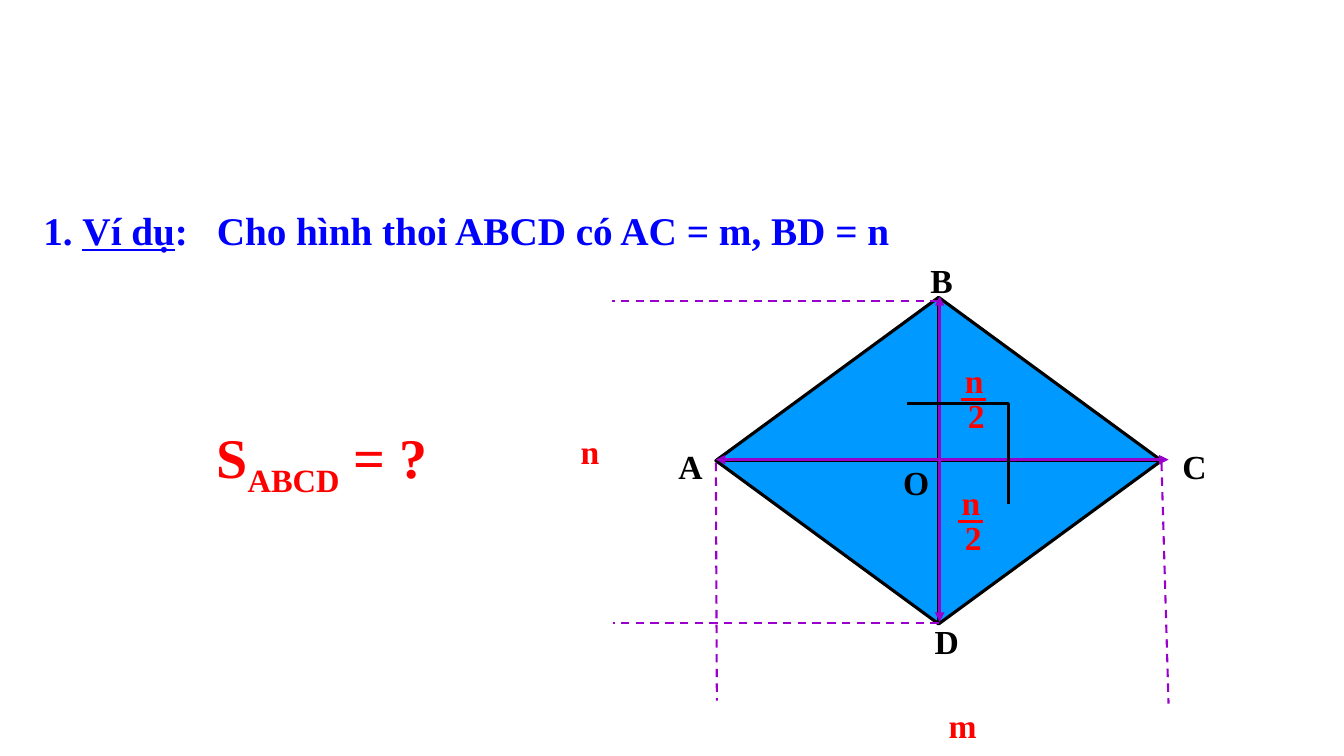
from lxml import etree
from pptx import Presentation
from pptx.dml.color import RGBColor
from pptx.enum.dml import MSO_LINE
from pptx.enum.shapes import MSO_CONNECTOR, MSO_SHAPE
from pptx.enum.text import MSO_ANCHOR, MSO_AUTO_SIZE, PP_ALIGN
from pptx.oxml.ns import qn
from pptx.util import Inches, Pt

STRAIGHT = MSO_CONNECTOR.STRAIGHT
DASH = MSO_LINE.DASH
TOP, LEFT, BOTTOM, RIGHT = range(4)

THEME = {
    "font": "Times New Roman",
    "blue": "0000FF", "sky": "0099FF", "black": "000000",
    "violet": "9900CC", "red": "FF0000", "white": "FFFFFF",
    "head": 28, "label": 24, "area": 40,
    "bold": 2.25, "thin": 1.5,
}

# Content: runs are (text, format)
HEAD = [("1. ", {}), ("Ví dụ", {"underline": True}),
        (":\tCho hình thoi ABCD có AC = m, BD = n", {})]
AREA = [("S", {}), ("ABCD", {"base": -25000}), (" = ?", {})]

# Rhombus: centre, half diagonals
MID_X, MID_Y = 9.31, 4.57
HALF_M, HALF_N = 2.21, 1.62
WEST, EAST = MID_X - HALF_M, MID_X + HALF_M
NORTH, SOUTH = MID_Y - HALF_N, MID_Y + HALF_N
SQUARE = 0.2

# Labels: text, left, top, width, colour
LABELS = [
    ("D", 9.17, 6.11, 0.55, "black"), ("A", 6.63, 4.37, 0.87, "black"),
    ("C", 11.63, 4.37, 0.87, "black"), ("B", 9.13, 2.53, 0.87, "black"),
    ("O", 8.86, 4.53, 0.39, "black"), ("m", 9.31, 6.94, 0.71, "red"),
    ("n", 5.66, 4.23, 0.39, "red"),
]
GUIDES = [
    (WEST, 4.59, 7.11, 6.95), (EAST, 4.59, 11.59, 6.98),
    (MID_X, 6.18, 6.08, 6.18), (MID_X, 2.99, 6.07, 2.99),
]
ARROWS = [(WEST, 4.56, 11.59, 4.56), (9.32, 2.94, 9.32, 6.17)]
HALVES = [(9.47, 3.52), (9.44, 4.73)]


def rgb(name):
    return RGBColor.from_string(THEME[name])


def place(shape, left, top, width, height):
    box = {"left": left, "top": top, "width": width, "height": height}
    for key, val in box.items():
        setattr(shape, key, Inches(val))


def write(shape, runs, size, hue, tab=None):
    frame = shape.text_frame
    look = {"word_wrap": True, "auto_size": MSO_AUTO_SIZE.NONE,
            "vertical_anchor": MSO_ANCHOR.TOP}
    for key, val in look.items():
        setattr(frame, key, val)
    para = frame.paragraphs[0]
    para.alignment = PP_ALIGN.LEFT
    para.space_before = Pt(0)
    if tab:
        tabs = etree.SubElement(para._p.get_or_add_pPr(), qn("a:tabLst"))
        etree.SubElement(tabs, qn("a:tab"), pos=str(Inches(tab)), algn="l")
    for text, extra in runs:
        run = para.add_run()
        run.text = text
        style = {"name": THEME["font"], "size": Pt(THEME[size]), "bold": True}
        style.update(extra)
        base = style.pop("base", None)
        for key, val in style.items():
            setattr(run.font, key, val)
        run.font.color.rgb = rgb(hue)
        if base:
            run.font._element.set("baseline", str(base))


def label(shapes, text, left, top, width, hue):
    box = shapes.add_textbox(0, 0, 0, 0)
    place(box, left, top, width, 0.5)
    write(box, [(text, {})], "label", hue)


def stroke(shapes, ends, hue, width="bold", dash=None, arrow=False):
    link = shapes.add_connector(STRAIGHT, *map(Inches, ends))
    link.line.color.rgb = rgb(hue)
    link.line.width = Pt(THEME[width])
    if dash:
        link.line.dash_style = dash
    if arrow:
        for tag in ("a:headEnd", "a:tailEnd"):
            etree.SubElement(link.line._get_or_add_ln(), qn(tag), type="triangle")
    etree.SubElement(link._element.spPr, qn("a:effectLst"))
    return link


def half(shapes, left, top):
    """Draw the fraction n over 2 as one group."""
    group = shapes.add_group_shape().shapes
    label(group, "2", left + 0.03, top + 0.35, 0.42, "red")
    label(group, "n", left, top, 0.42, "red")
    bar = top + 0.44
    stroke(group, (left + 0.06, bar, left + 0.31, bar), "red")


def main():
    deck = Presentation()
    deck.slide_width, deck.slide_height = Inches(13.33), Inches(7.5)
    shapes = deck.slides.add_slide(deck.slide_layouts[5]).shapes

    place(shapes.title, 0.33, 2, 9.33, 0.57)
    write(shapes.title, HEAD, "head", "blue", tab=1.72)

    rhomb = shapes.add_shape(MSO_SHAPE.DIAMOND, 0, 0, 0, 0)
    place(rhomb, WEST, NORTH, 2 * HALF_M, 2 * HALF_N)
    rhomb.shadow.inherit = False
    rhomb.fill.solid()
    rhomb.fill.fore_color.rgb = rgb("sky")
    rhomb.line.color.rgb = rgb("black")
    rhomb.line.width = Pt(THEME["bold"])

    for start, end in ((TOP, BOTTOM), (LEFT, RIGHT)):
        link = stroke(shapes, (WEST, MID_Y, EAST, MID_Y), "black")
        link.begin_connect(rhomb, start)
        link.end_connect(rhomb, end)

    for item in LABELS:
        label(shapes, *item)
    for ends in GUIDES:
        stroke(shapes, ends, "violet", "thin", DASH)
    for ends in ARROWS:
        stroke(shapes, ends, "violet", arrow=True)

    area = shapes.add_shape(MSO_SHAPE.RECTANGLE, 0, 0, 0, 0)
    place(area, 2.05, 4.14, 2.5, 0.77)
    area.shadow.inherit = False
    area.fill.solid()
    area.fill.fore_color.rgb = rgb("white")
    area.line.fill.background()
    write(area, AREA, "area", "red")

    left, top = 9.3, 4.38
    path = shapes.build_freeform(left, top, scale=Inches(1))
    path.add_line_segments([(left + SQUARE, top), (left + SQUARE, top + SQUARE)],
                           close=False)
    angle = path.convert_to_shape()
    angle.shadow.inherit = False
    angle.fill.background()
    angle.line.color.rgb = rgb("black")
    angle.line.width = Pt(THEME["bold"])

    for spot in HALVES:
        half(shapes, *spot)
    deck.save("out.pptx")


if __name__ == "__main__":
    main()
